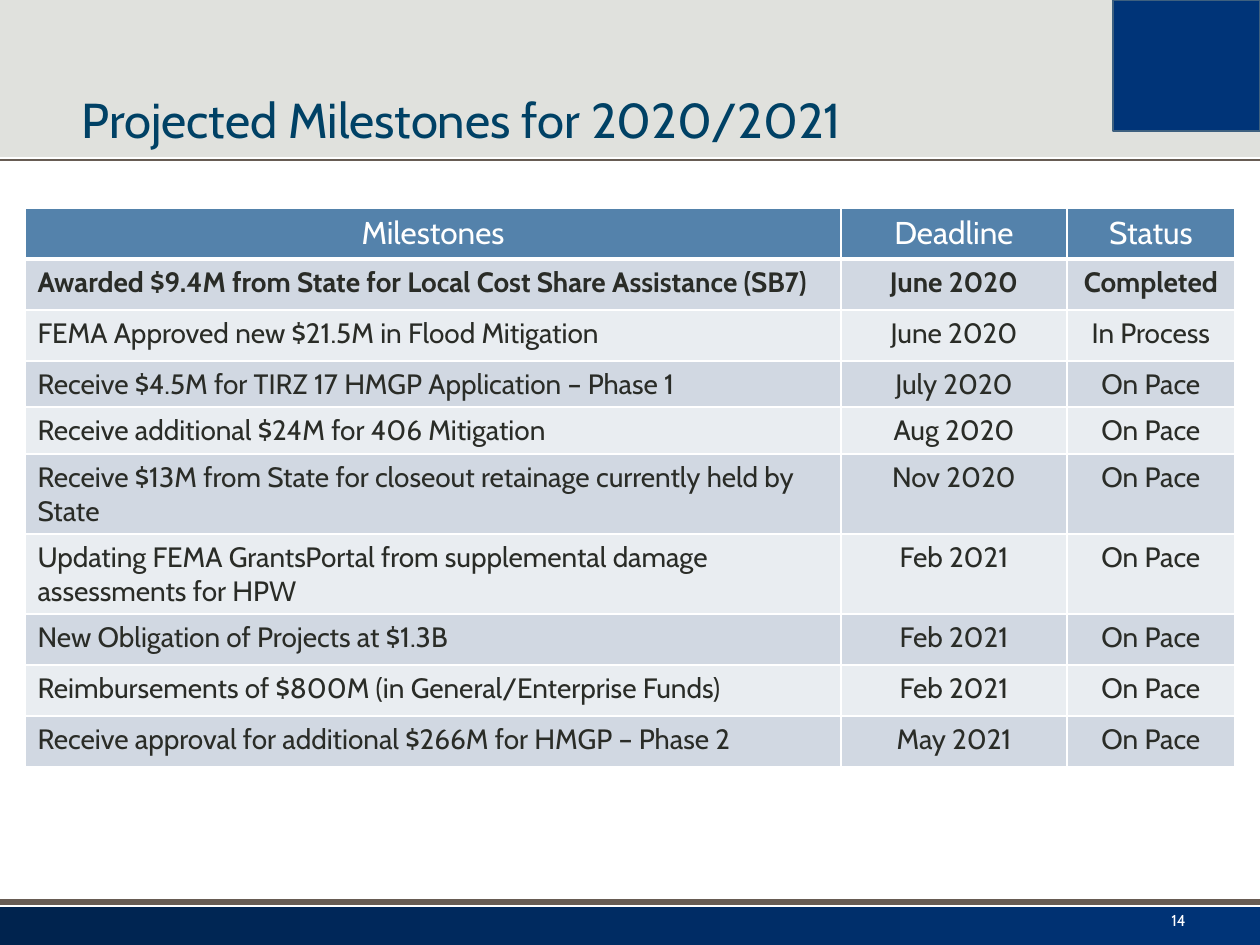
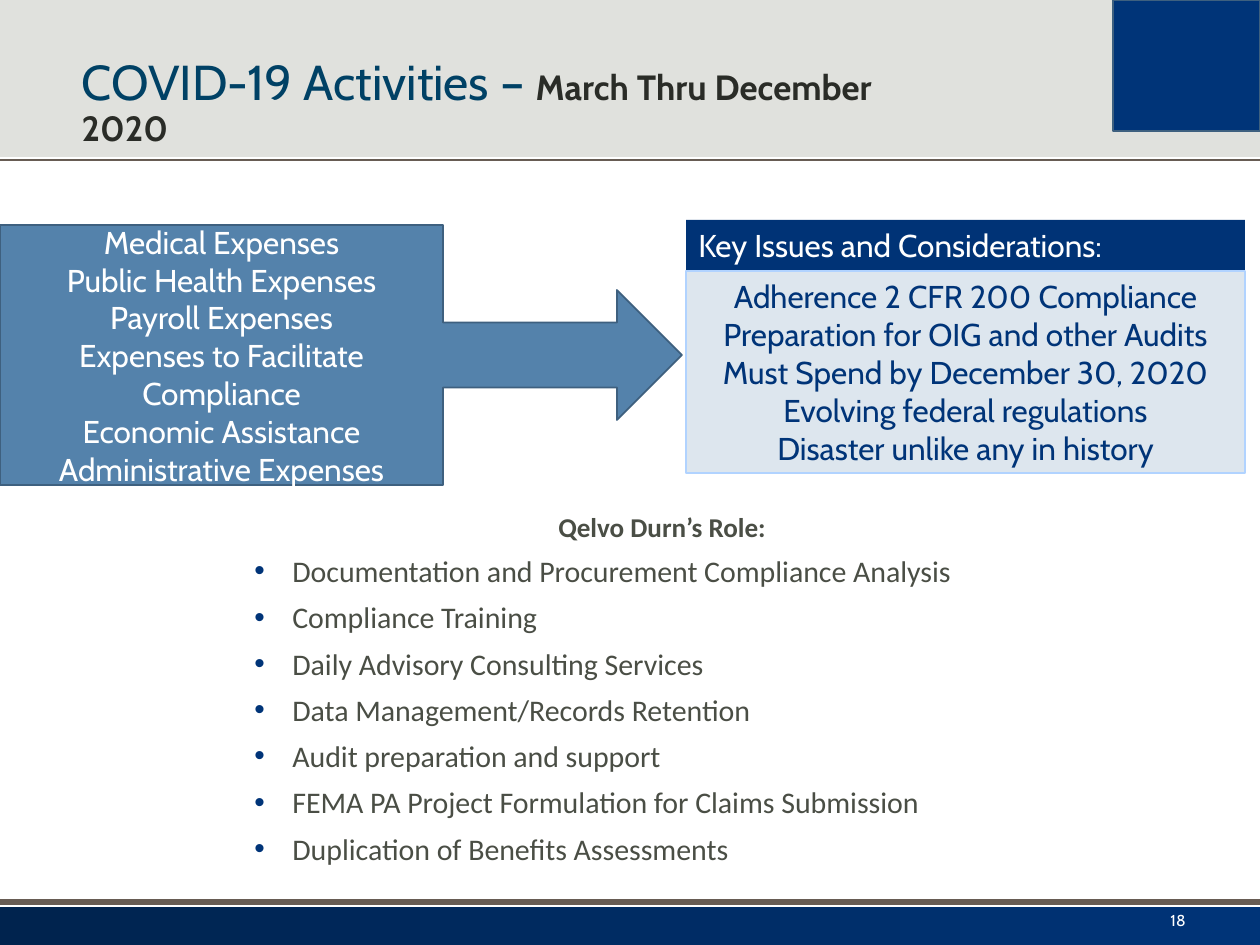
from typing import NamedTuple

from lxml import etree
from pptx import Presentation
from pptx import util as u
from pptx.dml.color import RGBColor
from pptx.enum import shapes, text
from pptx.oxml.ns import qn

DPI = 126
HUES = {
    "navy": "003478", "deep": "00234E", "head": "003376", "sand": "E0E1DD",
    "rule": "675C53", "edge": "3E607F", "title": "004165", "blue": "5482AB",
    "dark": "D1D8E2", "light": "E9EDF1", "pale": "DDE6EE", "sky": "B1D3FF",
    "ink": "2A2C27", "gray": "4A4E45", "white": "FFFFFF",
}
RECT = shapes.MSO_SHAPE.RECTANGLE
CALLOUT = shapes.MSO_SHAPE.RIGHT_ARROW_CALLOUT
LEFT, MID, RIGHT = text.PP_ALIGN.LEFT, text.PP_ALIGN.CENTER, text.PP_ALIGN.RIGHT
TOP, CENTER, BASE = (text.MSO_ANCHOR.TOP, text.MSO_ANCHOR.MIDDLE,
                     text.MSO_ANCHOR.BOTTOM)


class Area(NamedTuple):
    x: int
    y: int
    w: int
    h: int


class Style(NamedTuple):
    size: float
    hue: str
    bold: bool = False
    font: str = "Cabin"


class Block(NamedTuple):
    """A filled shape, with or without text."""
    area: Area
    fill: str
    edge: str = ""
    kind: shapes.MSO_SHAPE = RECT
    lines: tuple[str, ...] = ()
    style: Style = Style(18, "white")
    align: text.PP_ALIGN = MID
    anchor: text.MSO_ANCHOR = CENTER


class Rule(NamedTuple):
    y: int
    weight: int


class Goal(NamedTuple):
    name: str
    due: str
    state: str = "On Pace"


HEAD = Style(28, "title")
SUB = Style(20, "ink", True)
PAGE = Area(914, 898, 284, 45)
BANDS = (
    Block(Area(0, 907, 1260, 38), "navy"),
    Block(Area(0, 0, 1260, 157), "sand"),
    Block(Area(1113, 0, 147, 131), "navy", "edge"),
)
RULES = (Rule(160, 1), Rule(902, 3))

GOALS = (
    Goal("Milestones", "Deadline", "Status"),
    Goal("Awarded $9.4M from State for Local Cost Share Assistance (SB7)",
         "June 2020", "Completed"),
    Goal("FEMA Approved new $21.5M in Flood Mitigation", "June 2020", "In Process"),
    Goal("Receive $4.5M for TIRZ 17 HMGP Application – Phase 1", "July 2020"),
    Goal("Receive additional $24M for 406 Mitigation", "Aug 2020"),
    Goal("Receive $13M from State for closeout retainage currently held by State",
         "Nov 2020"),
    Goal("Updating FEMA GrantsPortal from supplemental damage assessments for HPW",
         "Feb 2021"),
    Goal("New Obligation of Projects at $1.3B", "Feb 2021"),
    Goal("Reimbursements of $800M (in General/Enterprise Funds)", "Feb 2021"),
    Goal("Receive approval for additional $266M for HMGP – Phase 2", "May 2021"),
)
GRID = Area(25, 208, 1210, 559)
COLS = (816, 226, 168)
ROWS = (51, 51, 51, 46, 47, 80, 80, 51, 51, 51)

PANELS = (
    Block(Area(686, 220, 559, 50), "head", lines=("Key Issues and Considerations:",),
          align=LEFT, anchor=TOP),
    Block(Area(686, 271, 559, 202), "pale", "sky", style=Style(18, "navy"), lines=(
        "Adherence 2 CFR 200 Compliance", "Preparation for OIG and other Audits",
        "Must Spend by December 30, 2020", "Evolving federal regulations",
        "Disaster unlike any in history")),
    Block(Area(0, 225, 682, 260), "blue", "edge", CALLOUT, (
        "Medical Expenses", "Public Health Expenses", "Payroll Expenses",
        "Expenses to Facilitate Compliance", "Economic Assistance",
        "Administrative Expenses")),
)
ROLE = Area(242, 510, 840, 374)
TASKS = (
    "Qelvo Durn’s Role:",
    "Documentation and Procurement Compliance Analysis",
    "Compliance Training",
    "Daily Advisory Consulting Services",
    "Data Management/Records Retention",
    "Audit preparation and support",
    "FEMA PA Project Formulation for Claims Submission",
    "Duplication of Benefits Assessments",
)


def px(n: float) -> u.Emu:
    return u.Emu(round(n * 914400 / DPI))


def tint(hue: str) -> RGBColor:
    return RGBColor.from_string(HUES[hue])


def dress(run, style: Style) -> None:
    run.font.name, run.font.size = style.font, u.Pt(style.size)
    run.font.bold = style.bold
    run.font.color.rgb = tint(style.hue)


def write(frame, words: str, style: Style, align=LEFT, anchor=TOP) -> None:
    frame.text = words
    frame.word_wrap = True
    frame.vertical_anchor = anchor
    for para in frame.paragraphs:
        para.alignment = align
        for run in para.runs:
            dress(run, style)


def draw(slide, block: Block):
    shape = slide.shapes.add_shape(block.kind, *map(px, block.area))
    shape.shadow.inherit = False
    shape.fill.solid()
    shape.fill.fore_color.rgb = tint(block.fill)
    if block.edge:
        shape.line.color.rgb = tint(block.edge)
        shape.line.width = u.Pt(1)
    else:
        shape.line.fill.background()
    if block.lines:
        write(shape.text_frame, "\n".join(block.lines), block.style,
              block.align, block.anchor)
    return shape


def stroke(slide, rule: Rule):
    line = slide.shapes.add_connector(shapes.MSO_CONNECTOR.STRAIGHT,
                                      px(0), px(rule.y), px(1260), px(rule.y))
    line.line.color.rgb = tint("rule")
    line.line.width = u.Pt(rule.weight)
    etree.SubElement(line._element.spPr, qn("a:effectLst"))
    return line


def frame(slide, layout) -> None:
    """Draw the shared bands and rules, then move them to the layout's back."""
    for spot in list(layout.placeholders):
        if spot.placeholder_format.type != shapes.PP_PLACEHOLDER.TITLE:
            spot._element.getparent().remove(spot._element)
    parts = [draw(slide, band) for band in BANDS]
    fill = parts[0].fill
    fill.gradient()
    fill.gradient_angle = 0
    for stop, hue in zip(fill.gradient_stops, ("deep", "navy")):
        stop.color.rgb = tint(hue)
    parts += [stroke(slide, rule) for rule in RULES]
    for spot, part in enumerate(parts, 2):
        layout.shapes._spTree.insert(spot, part._element)


def label(slide, words: str, width: int, page: int, sub: str = "") -> None:
    """Set the title, with an optional small bold tail, and the page number."""
    title = slide.shapes.title
    title.left, title.top, title.width, title.height = map(px, (69, 21, width, 134))
    write(title.text_frame, words, HEAD, anchor=BASE)
    title.text_frame.auto_size = text.MSO_AUTO_SIZE.NONE
    para = title.text_frame.paragraphs[0]
    para.line_spacing = 0.9
    if sub:
        run = para.add_run()
        run.text = sub
        dress(run, SUB)
    box = slide.shapes.add_textbox(*map(px, PAGE))
    write(box.text_frame, str(page), Style(9, "white"), RIGHT, CENTER)


def border(cell, row: int) -> None:
    """White cell edges, thick between the header and the first row."""
    thick = {("lnB", 0), ("lnT", 1)}
    for spot, side in enumerate(("lnL", "lnR", "lnT", "lnB")):
        line = etree.Element(qn(f"a:{side}"))
        line.set("w", str(u.Pt(3 if (side, row) in thick else 1)))
        fill = etree.SubElement(line, qn("a:solidFill"))
        etree.SubElement(fill, qn("a:srgbClr")).set("val", HUES["white"])
        cell._tc.get_or_add_tcPr().insert(spot, line)


def chart_goals(slide) -> None:
    table = slide.shapes.add_table(len(ROWS), len(COLS), *map(px, GRID)).table
    table.horz_banding = False
    for col, width in zip(table.columns, COLS):
        col.width = px(width)
    for r, (goal, tall) in enumerate(zip(GOALS, ROWS)):
        table.rows[r].height = px(tall)
        hue = "blue" if r == 0 else "dark" if r % 2 else "light"
        style = Style(18, "white") if r == 0 else Style(16, "ink", r == 1)
        for c, words in enumerate(goal):
            cell = table.cell(r, c)
            cell.fill.solid()
            cell.fill.fore_color.rgb = tint(hue)
            border(cell, r)
            write(cell.text_frame, words, style, LEFT if r and c == 0 else MID)


def bullet(para) -> None:
    props = para._p.get_or_add_pPr()
    props.set("marL", str(px(38)))
    props.set("indent", str(px(-38)))
    color = etree.SubElement(props, qn("a:buClr"))
    etree.SubElement(color, qn("a:srgbClr")).set("val", HUES["navy"])
    etree.SubElement(props, qn("a:buFont")).set("typeface", "Arial")
    etree.SubElement(props, qn("a:buChar")).set("char", "•")


def list_tasks(slide) -> None:
    box = slide.shapes.add_textbox(*map(px, ROLE)).text_frame
    write(box, "\n".join(TASKS), Style(17.1, "gray", font="Calibri"))
    first, *rest = box.paragraphs
    first.alignment = MID
    first.line_spacing = 0.8
    dress(first.runs[0], Style(15.5, "gray", True, "Calibri"))
    for para in rest:
        bullet(para)
        para.line_spacing = 0.8
        para.space_before = u.Pt(10)


def main() -> None:
    deck = Presentation()
    deck.slide_width, deck.slide_height = px(1260), px(945)
    layout = deck.slide_layouts[5]

    plan = deck.slides.add_slide(layout)
    frame(plan, layout)
    label(plan, "Projected Milestones for 2020/2021", 1010, 14)
    chart_goals(plan)

    covid = deck.slides.add_slide(layout)
    label(covid, "COVID-19 Activities – ", 897, 18, "March Thru December 2020")
    list_tasks(covid)
    for panel in PANELS:
        draw(covid, panel)

    deck.save("out.pptx")


if __name__ == "__main__":
    main()
